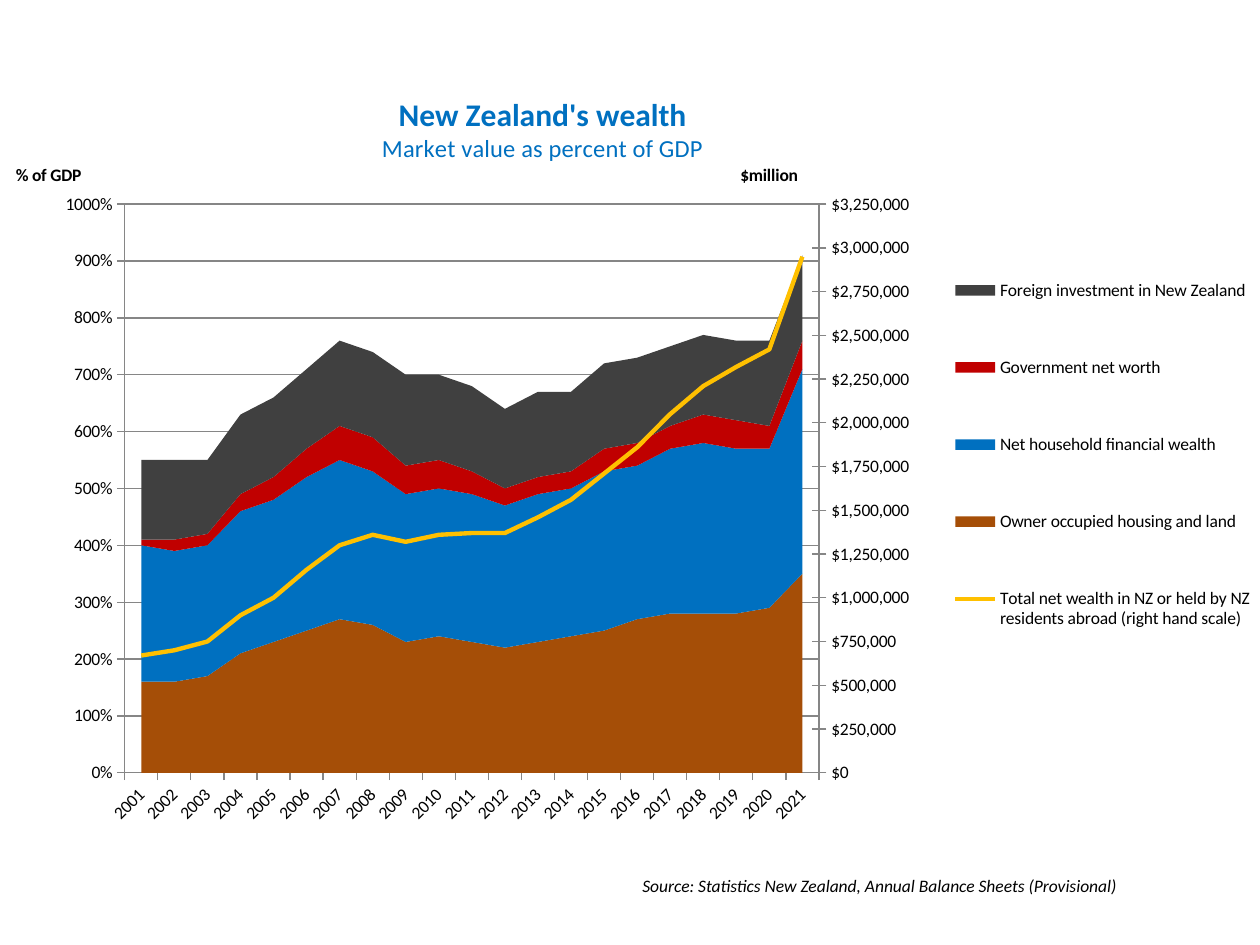
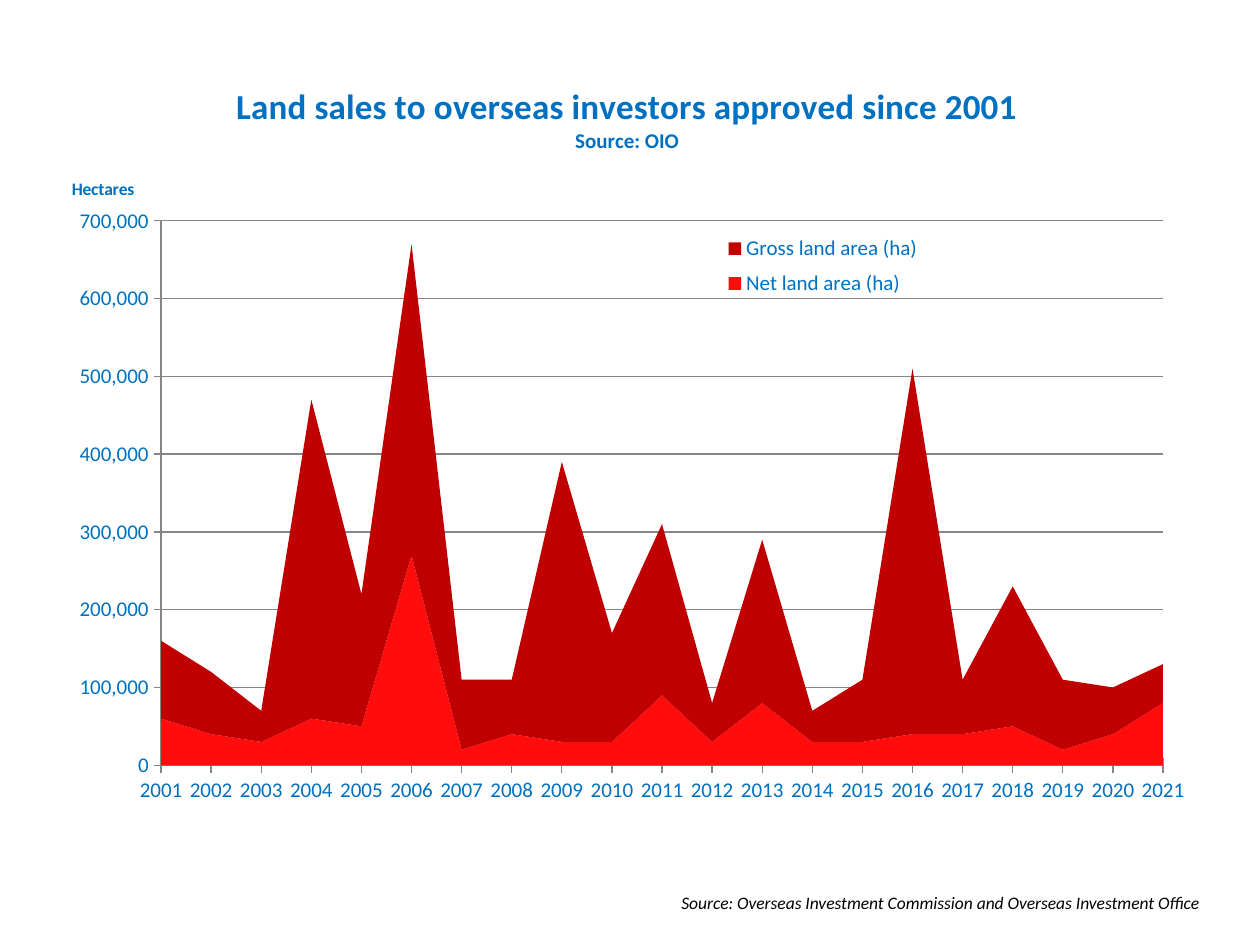
from copy import deepcopy
from lxml import etree
from pptx import Presentation
from pptx import util as u
from pptx.chart.data import CategoryChartData
from pptx.dml.color import RGBColor
from pptx.enum import chart as kinds, text
from pptx.oxml import parse_xml
from pptx.oxml.ns import qn, nsdecls

WIDTH, HEIGHT = u.Inches(10), u.Inches(7.5)
FONT = "Calibri"
COLOURS = {
    "ink": "000000", "blue": "0070C0", "rule": "868686", "brown": "A54E07",
    "dark_red": "C00000", "red": "FF0D0D", "grey": "404040", "gold": "FFC000",
}
YEARS = [str(year) for year in range(2001, 2022)]

WEALTH = [
    ("Owner occupied housing and land", "brown",
     [160, 160, 170, 210, 230, 250, 270, 260, 230, 240, 230,
      220, 230, 240, 250, 270, 280, 280, 280, 290, 350]),
    ("Net household financial wealth", "blue",
     [240, 230, 230, 250, 250, 270, 280, 270, 260, 260, 260,
      250, 260, 260, 280, 270, 290, 300, 290, 280, 360]),
    ("Government net worth", "dark_red",
     [10, 20, 20, 30, 40, 50, 60, 60, 50, 50, 40,
      30, 30, 30, 40, 40, 40, 50, 50, 40, 50]),
    ("Foreign investment in New Zealand", "grey",
     [140, 140, 130, 140, 140, 140, 150, 150, 160, 150, 150,
      140, 150, 140, 150, 150, 140, 140, 140, 150, 150]),
    ("Total net wealth in NZ or held by NZ residents abroad (right hand scale)", "gold",
     [670000, 700000, 750000, 900000, 1000000, 1160000, 1300000,
      1360000, 1320000, 1360000, 1370000, 1370000, 1460000, 1560000,
      1710000, 1860000, 2050000, 2210000, 2320000, 2420000, 2950000]),
]
LAND = [
    ("Net land area (ha)", "red",
     [60000, 40000, 30000, 60000, 50000, 270000, 20000, 40000, 30000, 30000, 90000,
      30000, 80000, 30000, 30000, 40000, 40000, 50000, 20000, 40000, 80000]),
    ("Gross land area (ha)", "dark_red",
     [100000, 80000, 40000, 410000, 170000, 400000, 90000, 70000, 360000, 140000, 220000,
      50000, 210000, 40000, 80000, 470000, 70000, 180000, 90000, 60000, 50000]),
]


def style_font(font, colour, **values):
    font.color.rgb = RGBColor.from_string(COLOURS[colour])
    for name, value in {"name": FONT, **values}.items():
        setattr(font, name, value)


def style_line(line, colour, points):
    line.color.rgb = RGBColor.from_string(COLOURS[colour])
    line.width = u.Pt(points)


def set_value(parent, tag, value):
    parent.find(".//" + qn(tag)).set("val", str(value))


def set_layout(parent, index, share, inner=False):
    for old in parent.findall(qn("c:layout")):
        parent.remove(old)
    layout = parse_xml(f"<c:layout {nsdecls('c')}><c:manualLayout/></c:layout>")
    fields = [("xMode", "edge"), ("yMode", "edge"), *zip("xywh", share)]
    if inner:
        fields.insert(0, ("layoutTarget", "inner"))
    for tag, value in fields:
        etree.SubElement(layout[0], qn("c:" + tag)).set("val", str(value))
    parent.insert(index, layout)


def write_title(title, lines, colour, share):
    frame = title.text_frame
    for number, (words, size, bold) in enumerate(lines):
        para = frame.add_paragraph() if number else frame.paragraphs[0]
        para.alignment = text.PP_ALIGN.CENTER
        span = para.add_run()
        span.text = words
        style_font(span.font, colour, size=u.Pt(size), bold=bold)
    body = title._element.find(".//" + qn("a:bodyPr"))
    body.set("rot", "0")
    body.set("vert", "horz")
    set_layout(title._element, 1, share)


def style_axes(chart, look):
    value_axis, year_axis = chart.value_axis, chart.category_axis
    for axis in (value_axis, year_axis):
        axis.major_tick_mark = kinds.XL_TICK_MARK.CROSS
        axis.minor_tick_mark = kinds.XL_TICK_MARK.NONE
        style_font(axis.tick_labels.font, look["ink"], size=u.Pt(look["label_size"]))
        style_line(axis.format.line, "rule", 0.75)
    for name, value in {"minimum_scale": 0, "maximum_scale": look["top"],
                        "major_unit": look["step"], "has_major_gridlines": True}.items():
        setattr(value_axis, name, value)
    style_line(value_axis.major_gridlines.format.line, "rule", 0.75)
    value_axis.tick_labels.number_format = look["number"]
    value_axis.tick_labels.number_format_is_linked = False
    write_title(value_axis.axis_title, [(look["unit"], 10, True)], look["ink"], look["unit_at"])
    set_value(value_axis._element, "c:crossBetween", look["crossing"])
    if look["turn"]:
        year_axis._element.find(".//" + qn("a:bodyPr")).set("rot", str(look["turn"] * 60000))


def add_area_chart(page, box, series, look):
    data = CategoryChartData()
    data.categories = YEARS
    for name, _, values in series:
        data.add_series(name, values)
    left, top, width, height = box
    chart = page.shapes.add_chart(
        kinds.XL_CHART_TYPE.AREA_STACKED, int(WIDTH * left), int(HEIGHT * top),
        int(WIDTH * width), int(HEIGHT * height), data).chart
    style_font(chart.font, look["ink"], size=u.Pt(10))
    chart.plots[0].vary_by_categories = False
    for area, (_, colour, _) in zip(chart.plots[0].series, series):
        area.format.fill.solid()
        area.format.fill.fore_color.rgb = RGBColor.from_string(COLOURS[colour])
    chart.has_title = True
    write_title(chart.chart_title, look["title"], "blue", look["title_at"])
    style_axes(chart, look)
    chart.has_legend = True
    chart.legend.position = kinds.XL_LEGEND_POSITION.RIGHT
    chart.legend.include_in_layout = look["overlay"]
    style_font(chart.legend.font, look["ink"], size=u.Pt(look["legend_size"]))
    set_layout(chart.legend._element, 1, look["legend_at"])
    set_layout(chart._chartSpace.chart.plotArea, 0, look["plot"], inner=True)
    return chart


def move_last_series_to_right_axis(chart, unit, unit_at, number, top, step, colour):
    plot_area = chart._chartSpace.chart.plotArea
    area_plot = plot_area.find(qn("c:areaChart"))
    line_plot = parse_xml(
        f'<c:lineChart {nsdecls("c")}><c:grouping val="standard"/><c:varyColors val="0"/>'
        '<c:marker val="1"/><c:axId val="5001"/><c:axId val="5002"/></c:lineChart>')
    line_plot.insert(2, area_plot.findall(qn("c:ser"))[-1])
    area_plot.addnext(line_plot)
    total = chart.plots[1].series[0]
    total.format.fill.background()
    for fill in total._element.spPr.findall(qn("a:noFill")):
        total._element.spPr.remove(fill)
    style_line(total.format.line, colour, 2.5)
    total.marker.style = kinds.XL_MARKER_STYLE.NONE
    total.smooth = False

    left_axis = chart.value_axis._element
    right_axis, hidden_years = deepcopy(left_axis), deepcopy(chart.category_axis._element)
    left_axis.addnext(right_axis)
    right_axis.addnext(hidden_years)
    for axis, own, other in ((hidden_years, 5001, 5002), (right_axis, 5002, 5001)):
        set_value(axis, "c:axId", own)
        set_value(axis, "c:crossAx", other)
    set_value(hidden_years, "c:delete", 1)
    right_axis.remove(right_axis.find(qn("c:majorGridlines")))
    for tag, value in {"c:axPos": "r", "c:crosses": "max", "c:max": top,
                       "c:majorUnit": step}.items():
        set_value(right_axis, tag, value)
    right_axis.find(qn("c:numFmt")).set("formatCode", number)
    title = right_axis.find(qn("c:title"))
    title.find(".//" + qn("a:t")).text = unit
    set_layout(title, 1, unit_at)


def add_source(page, words, left, top, width, wrap):
    box = page.shapes.add_textbox(int(WIDTH * left), int(HEIGHT * top),
                                  int(WIDTH * width), int(HEIGHT * 0.036))
    box.text_frame.word_wrap = wrap
    box.text_frame.auto_size = text.MSO_AUTO_SIZE.SHAPE_TO_FIT_TEXT
    span = box.text_frame.paragraphs[0].add_run()
    span.text = words
    style_font(span.font, "ink", size=u.Pt(10), italic=True)


def build_wealth(page):
    add_source(page, "Source: Statistics New Zealand, Annual Balance Sheets (Provisional)",
               0.5, 0.919, 0.465, True)
    chart = add_area_chart(page, (0, 0.07, 1, 0.83), WEALTH, {
        "title": [("New Zealand's wealth", 18, True),
                  ("Market value as percent of GDP", 14, False)],
        "title_at": (0.3, 0.03), "ink": "ink", "label_size": 10, "legend_size": 10,
        "number": '0"%"', "top": 1000, "step": 100, "unit": "% of GDP",
        "unit_at": (0.01, 0.12), "crossing": "between", "turn": -45,
        "overlay": False, "legend_at": (0.75, 0.2, 0.25, 0.59),
        "plot": (0.099, 0.176, 0.551, 0.725)})
    move_last_series_to_right_axis(chart, "$million", (0.585, 0.12), "[$$-1409]#,##0",
                                   3250000, 250000, "gold")


def build_land(page):
    add_source(page, "Source: Overseas Investment Commission and Overseas Investment Office",
               0.531, 0.937, 0.437, False)
    add_area_chart(page, (0.036, 0.059, 0.928, 0.84), LAND, {
        "title": [("Land sales to overseas investors approved since 2001", 20, True),
                  ("Source: OIO", 12, True)],
        "title_at": (0.16, 0.03), "ink": "blue", "label_size": 12, "legend_size": 12,
        "number": "#,##0", "top": 700000, "step": 100000, "unit": "Hectares",
        "unit_at": (0.02, 0.15), "crossing": "midCat", "turn": 0,
        "overlay": True, "legend_at": (0.54, 0.215, 0.25, 0.1),
        "plot": (0.099, 0.208, 0.857, 0.686)})


def main():
    deck = Presentation()
    deck.slide_width, deck.slide_height = WIDTH, HEIGHT
    for build in (build_wealth, build_land):
        build(deck.slides.add_slide(deck.slide_layouts[6]))
    deck.save("out.pptx")


if __name__ == "__main__":
    main()
